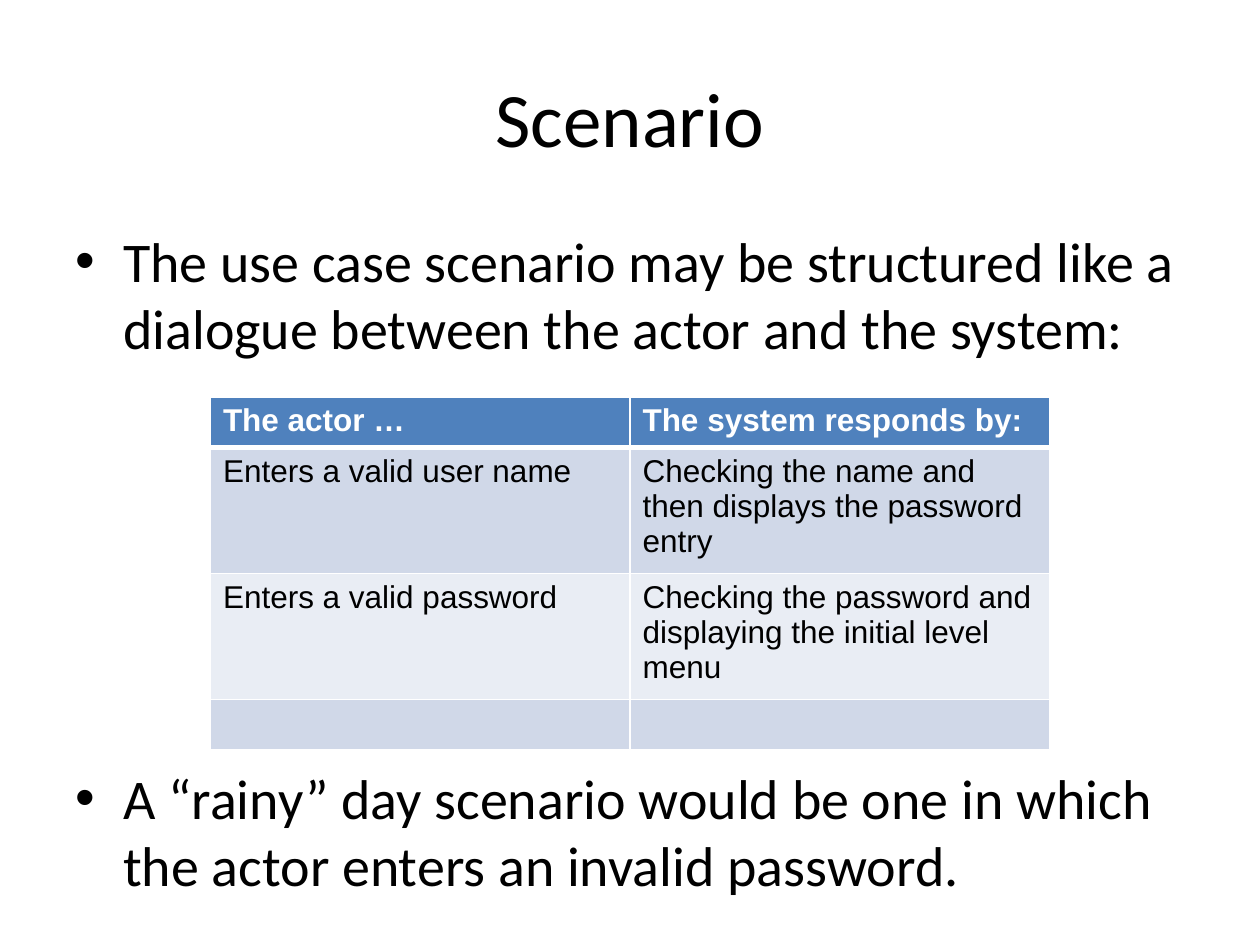
from lxml import etree
from pptx import Presentation
from pptx.dml.color import RGBColor
from pptx.enum.text import MSO_ANCHOR, PP_ALIGN
from pptx.oxml.ns import qn
from pptx.util import Inches, Pt

TITLE = "Scenario"
BULLETS = [
    "The use case scenario may be structured like a dialogue between the actor and the system:",
    "A “rainy” day scenario would be one in which the actor enters an invalid password.",
]
DIALOGUE = [
    ("The actor …", "The system responds by:"),
    ("Enters a valid user name", "Checking the name and then displays the password entry"),
    ("Enters a valid password", "Checking the password and displaying the initial level menu"),
    ("", ""),
]
ROW_HEIGHTS = [0.4, 0.94, 0.94, 0.4]
COLUMN_WIDTH = 3.33
TABLE_GAP = 230  # points left between the bullets for the table
COLORS = {"text": "000000", "white": "FFFFFF", "header": "4F81BD",
          "odd": "D0D8E8", "even": "E9EDF4"}


def color(name):
    return RGBColor.from_string(COLORS[name])


def style(p, font, size, color_name="text", bold=False):
    p.font.name = font
    p.font.size = Pt(size)
    p.font.bold = bold
    p.font.color.rgb = color(color_name)


def add_bullet(p):
    pPr = p._p.get_or_add_pPr()
    pPr.set("marL", str(Inches(0.38)))
    pPr.set("indent", str(Inches(-0.38)))
    bullet_font = etree.Element(qn("a:buFont"), typeface="Arial")
    bullet = etree.Element(qn("a:buChar"), char="•")
    pPr.insert_element_before(bullet_font, "a:tabLst", "a:defRPr", "a:extLst")
    pPr.insert_element_before(bullet, "a:tabLst", "a:defRPr", "a:extLst")


def set_borders(cell, **widths):
    """Draw white borders; widths maps lnL, lnR, lnT, lnB to points."""
    tcPr = cell._tc.get_or_add_tcPr()
    for side, width in widths.items():
        ln = etree.SubElement(tcPr, qn(f"a:{side}"), w=str(Pt(width)))
        fill = etree.SubElement(ln, qn("a:solidFill"))
        etree.SubElement(fill, qn("a:srgbClr"), val=COLORS["white"])


prs = Presentation()
prs.slide_width, prs.slide_height = Inches(10), Inches(7.5)
s = prs.slides.add_slide(prs.slide_layouts[5])

title = s.shapes.title
title.left, title.top = Inches(0.5), Inches(0.3)
title.width, title.height = Inches(9), Inches(1.25)
title.text_frame.text = TITLE
title.text_frame.vertical_anchor = MSO_ANCHOR.MIDDLE
p = title.text_frame.paragraphs[0]
p.alignment = PP_ALIGN.CENTER
style(p, "Calibri", 44)

body = s.shapes.add_textbox(Inches(0.5), Inches(1.75), Inches(9), Inches(4.95))
tf = body.text_frame
tf.word_wrap = True
tf.text = "\n".join(BULLETS)
for p in tf.paragraphs:
    style(p, "Calibri", 32)
    add_bullet(p)
tf.paragraphs[1].space_before = Pt(TABLE_GAP)

columns = len(DIALOGUE[0])
table_width = columns * COLUMN_WIDTH
table = s.shapes.add_table(
    len(DIALOGUE), columns, Inches((10 - table_width) / 2), Inches(3.15),
    Inches(table_width), Inches(sum(ROW_HEIGHTS))).table
for i, (texts, height) in enumerate(zip(DIALOGUE, ROW_HEIGHTS)):
    table.rows[i].height = Inches(height)
    header = i == 0
    fill_name = "header" if header else "odd" if i % 2 else "even"
    for j, text in enumerate(texts):
        cell = table.cell(i, j)
        set_borders(cell, lnL=1, lnR=1, lnT=3 if i == 1 else 1, lnB=3 if header else 1)
        cell.fill.solid()
        cell.fill.fore_color.rgb = color(fill_name)
        cell.text = text
        style(cell.text_frame.paragraphs[0], "Arial", 18,
              "white" if header else "text", header)

prs.save("out.pptx")
